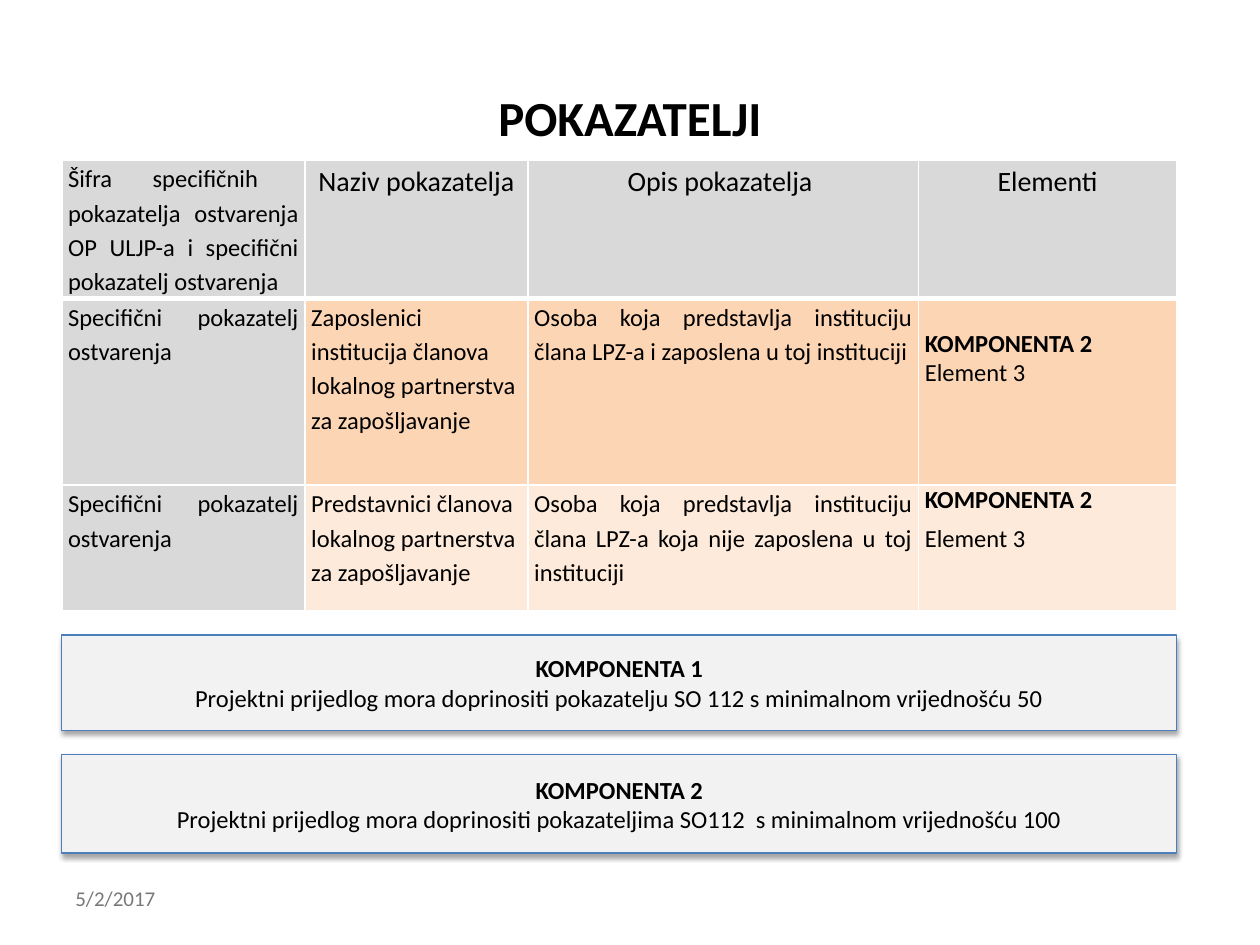
from lxml import etree
from pptx import Presentation
from pptx import util as u
from pptx.dml.color import RGBColor
from pptx.enum import shapes, text
from pptx.oxml import ns

LEFT, WIDE = 0.49, 8.85
COLS = [1.93, 1.77, 3.1, 2.05]
ROWS = [1.1, 1.48, 1]
GREY, PEACH, CREAM = "D9D9D9", "FCD5B5", "FDEADA"
JUST, MID, START = text.PP_ALIGN.JUSTIFY, text.PP_ALIGN.CENTER, text.PP_ALIGN.LEFT
CODE = "Specifični pokazatelj ostvarenja"
HEAD = [
    ("Šifra specifičnih  pokazatelja ostvarenja OP ULJP-a i specifični pokazatelj ostvarenja", JUST, 14),
    ("Naziv pokazatelja", MID, 16),
    ("Opis pokazatelja ", MID, 16),
    ("Elementi", MID, 16),
]
BODY = [
    (CODE, "Zaposlenici institucija članova lokalnog partnerstva za zapošljavanje",
     "Osoba koja predstavlja instituciju člana LPZ-a i zaposlena u toj instituciji"),
    (CODE, "Predstavnici članova lokalnog partnerstva za zapošljavanje",
     "Osoba koja predstavlja instituciju člana LPZ-a koja nije zaposlena u toj instituciji"),
]
NOTES = [
    ("KOMPONENTA 1", 5.04, 0.76,
     "Projektni prijedlog mora doprinositi pokazatelju SO 112 s minimalnom vrijednošću 50"),
    ("KOMPONENTA 2", 5.99, 0.78,
     "Projektni prijedlog mora doprinositi pokazateljima SO112  s minimalnom vrijednošću 100"),
]


def rgb(code):
    """Return the colour for a hex string."""
    return RGBColor.from_string(code)


def place(*box):
    """Return left, top, width and height as lengths."""
    return [u.Inches(side) for side in box]


def write(frame, words, align=START, size=14, bold=False, color="000000", loose=False):
    """Add one paragraph, using the first one while it is empty."""
    first = not frame.paragraphs[0].runs
    para = frame.paragraphs[0] if first else frame.add_paragraph()
    para.alignment = align
    if loose:
        para.line_spacing = 1.15
        para.space_after = u.Pt(3)
        para.space_before = u.Pt(0 if first else 3)
    run = para.add_run()
    run.text = words
    font = run.font
    font.name, font.size, font.bold = "Calibri", u.Pt(size), bold
    font.color.rgb = rgb(color)


def edge(cell, top, bottom):
    """Draw white borders round a cell, widths in points."""
    props = cell._tc.get_or_add_tcPr()
    widths = {"lnL": 1, "lnR": 1, "lnT": top, "lnB": bottom}
    for spot, (tag, width) in enumerate(widths.items()):
        line = etree.Element(ns.qn("a:" + tag), w=str(u.Pt(width)))
        fill = etree.SubElement(line, ns.qn("a:solidFill"))
        etree.SubElement(fill, ns.qn("a:srgbClr"), val="FFFFFF")
        props.insert(spot, line)


def style(cell, color, row):
    """Set the margins, fill and borders of a cell."""
    cell.margin_left = cell.margin_right = u.Inches(0.05)
    cell.margin_top = cell.margin_bottom = 0
    cell.fill.solid()
    cell.fill.fore_color.rgb = rgb(color)
    edge(cell, 3 if row == 1 else 1, 3 if row == 0 else 1)


def add_grid(slide):
    """Add the table of indicators."""
    grid = slide.shapes.add_table(len(ROWS), len(COLS), *place(LEFT, 1.27, WIDE, sum(ROWS))).table
    for col, width in zip(grid.columns, COLS):
        col.width = u.Inches(width)
    for row, height in zip(grid.rows, ROWS):
        row.height = u.Inches(height)
    for col, (words, align, size) in enumerate(HEAD):
        style(grid.cell(0, col), GREY, 0)
        write(grid.cell(0, col).text_frame, words, align, size, loose=True)
    for row, (items, tint) in enumerate(zip(BODY, (PEACH, CREAM)), 1):
        for col, (words, align) in enumerate(zip(items, (JUST, START, JUST))):
            style(grid.cell(row, col), tint if col else GREY, row)
            write(grid.cell(row, col).text_frame, words, align, loose=True)
        last = grid.cell(row, 3)
        style(last, tint, row)
        write(last.text_frame, "KOMPONENTA 2 ", JUST, bold=True)
        write(last.text_frame, "Element 3", JUST, loose=row == 2)
    grid.cell(1, 3).margin_top = u.Inches(0.24)


def shade(shape):
    """Give a shape a soft shadow below it."""
    shape.shadow.inherit = False
    glow = shape._element.spPr.find(ns.qn("a:effectLst"))
    drop = etree.SubElement(glow, ns.qn("a:outerShdw"), blurRad=str(u.Pt(3.1)),
                            dist=str(u.Pt(1.8)), dir="5400000", rotWithShape="0")
    color = etree.SubElement(drop, ns.qn("a:srgbClr"), val="000000")
    etree.SubElement(color, ns.qn("a:alpha"), val="35000")


def add_note(slide, name, top, height, words):
    """Add a framed box with a bold name over a sentence."""
    box = slide.shapes.add_shape(shapes.MSO_SHAPE.RECTANGLE, *place(LEFT, top, WIDE, height))
    box.fill.solid()
    box.fill.fore_color.rgb = rgb("F2F2F2")
    box.line.color.rgb = rgb("4B7EBC")
    box.line.width = u.Pt(0.75)
    shade(box)
    frame = box.text_frame
    frame.vertical_anchor = text.MSO_ANCHOR.MIDDLE
    write(frame, name, MID, bold=True)
    write(frame, words, MID)


def add_title(slide, words):
    """Place and fill the title."""
    title = slide.shapes.title
    title.left, title.top, title.width, title.height = place(0.5, 0.3, 9, 1.25)
    title.text_frame.vertical_anchor = text.MSO_ANCHOR.MIDDLE
    write(title.text_frame, words, MID, 28, True)


def add_date(slide, words):
    """Add the date at the foot."""
    frame = slide.shapes.add_textbox(*place(0.5, 6.98, 2.33, 0.4)).text_frame
    frame.word_wrap = True
    write(frame, words, size=12, color="777877")


def main():
    """Build and save the slide."""
    deck = Presentation()
    deck.slide_width, deck.slide_height = u.Inches(10), u.Inches(7.5)
    slide = deck.slides.add_slide(deck.slide_layouts[5])
    add_date(slide, "5/2/2017")
    add_title(slide, "POKAZATELJI")
    add_grid(slide)
    for note in NOTES:
        add_note(slide, *note)
    deck.save("out.pptx")


if __name__ == "__main__":
    main()
